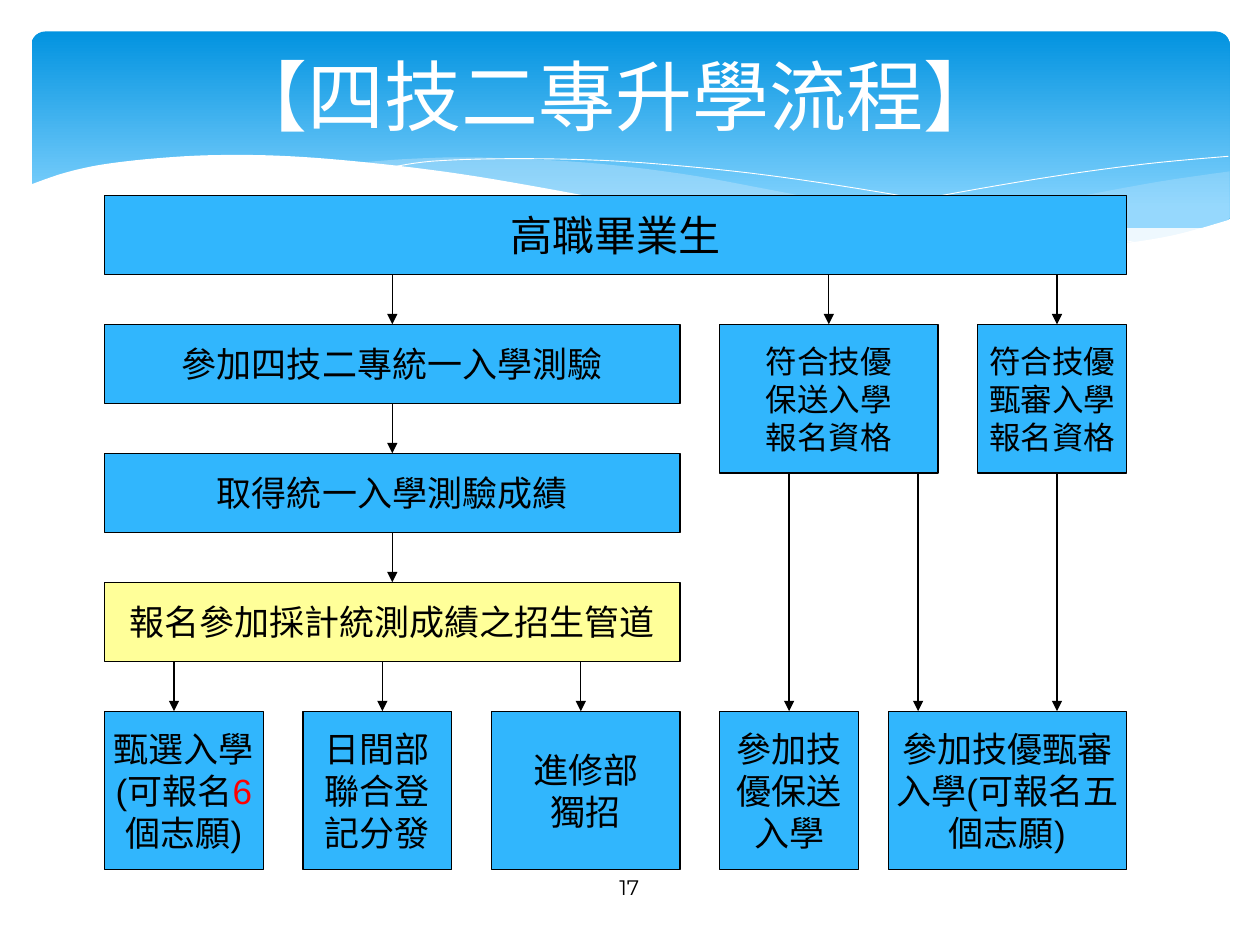
from lxml import etree
from pptx import Presentation
from pptx import util as u
from pptx.dml.color import RGBColor
from pptx.enum import shapes, text
from pptx.oxml import ns

BLUE, YELLOW, BLACK, WHITE, RED = "31B6FD", "FFFF99", "000000", "FFFFFF", "FF0000"
MIDDLE = {"vertical_anchor": text.MSO_ANCHOR.MIDDLE, "margin_left": 0,
          "margin_right": 0, "margin_top": 0, "margin_bottom": 0}
color = RGBColor.from_string


def write(frame, content, wrap, font_format):
    """Fill a text frame with centred lines; the digit 6 is shown in red."""
    for name, value in {**MIDDLE, "word_wrap": wrap}.items():
        setattr(frame, name, value)
    for index, line in enumerate(content.split("\n")):
        paragraph = frame.paragraphs[0] if index == 0 else frame.add_paragraph()
        paragraph.alignment = text.PP_ALIGN.CENTER
        for part in filter(None, line.partition("6")):
            run = paragraph.add_run()
            run.text = part
            for name, value in font_format.items():
                if name == "color":
                    run.font.color.rgb = color(RED if part == "6" else value)
                else:
                    setattr(run.font, name, value)


def smooth(points, steps=6):
    """Return a Catmull-Rom curve through the points, in EMU."""
    padded = [points[0], *points, points[-1]]
    curve = [points[0]]
    for a, b, c, d in zip(padded, padded[1:], padded[2:], padded[3:]):
        for step in range(1, steps + 1):
            t = step / steps
            curve.append([(2 * q + (r - p) * t + (2 * p - 5 * q + 4 * r - s) * t ** 2
                           + (3 * q - p - 3 * r + s) * t ** 3) / 2
                          for p, q, r, s in zip(a, b, c, d)])
    return [(u.Inches(x), u.Inches(y)) for x, y in curve]


presentation = Presentation()
presentation.slide_width, presentation.slide_height = u.Inches(10), u.Inches(7.5)
slide = presentation.slides.add_slide(presentation.slide_layouts[5])

# Gradient banner
banner = slide.shapes.add_shape(shapes.MSO_SHAPE.ROUNDED_RECTANGLE, u.Inches(0.25),
                                u.Inches(0.25), u.Inches(9.51), u.Inches(1.56))
banner.adjustments[0] = 0.07
banner.shadow.inherit = False
banner.line.fill.background()
banner.fill.gradient()
banner.fill.gradient_angle = 270
for stop, position, shade in zip(banner.fill.gradient_stops, (0, 0.9), ("0293E0", "83D3FE")):
    stop.position = position
    stop.color.rgb = color(shade)

# Waves: curves of one outline, fill, opacity in percent (no fill: white line)
waves = [
    ([[(9.76, 1.36), (9.21, 1.44), (8.61, 1.55), (7.79, 1.71), (7.06, 1.83), (6.61, 1.89)],
      [(6.61, 1.89), (7.18, 1.95), (7.69, 1.99), (8.35, 1.99), (8.89, 1.95), (9.35, 1.86),
       (9.76, 1.74)]], "C6E7FC", 29),
    ([[(8.93, 1.95), (8.07, 1.85), (7.06, 1.69), (6.13, 1.51), (5.41, 1.38), (4.64, 1.29),
       (3.8, 1.25), (3.28, 1.26), (2.86, 1.29)],
      [(2.86, 1.29), (3.62, 1.38), (4.49, 1.54), (5.3, 1.69), (6.18, 1.84), (6.95, 1.93),
       (7.61, 1.99), (8.28, 2), (8.93, 1.95)]], "C6E7FC", 40),
    ([[(3.09, 1.33), (3.43, 1.28), (4.01, 1.26), (4.69, 1.27), (5.32, 1.31), (6.08, 1.39),
       (6.95, 1.52), (7.95, 1.7), (9.07, 1.94)]], None, 100),
    ([[(6.13, 1.82), (6.72, 1.7), (7.48, 1.55), (8.36, 1.4), (9.1, 1.3), (9.75, 1.24)]],
     None, 100),
    ([[(9.77, 1.74), (9.3, 1.87), (8.75, 1.95), (8.09, 1.99), (7.26, 1.95), (6.26, 1.84),
       (5.29, 1.68), (4.47, 1.52), (3.65, 1.38), (2.92, 1.29), (2.3, 1.24), (1.77, 1.23),
       (1.32, 1.25), (0.85, 1.3), (0.52, 1.37), (0.23, 1.47)],
      [(0.23, 1.47), (0.23, 2.41)], [(0.23, 2.41), (9.77, 2.41)]], WHITE, 100),
]
for curves, shade, opacity in waves:
    outline = [point for curve in curves for point in smooth(curve)]
    builder = slide.shapes.build_freeform(*outline[0])
    builder.add_line_segments(outline[1:], close=shade is not None)
    wave = builder.convert_to_shape()
    wave.shadow.inherit = False
    if shade is None:
        wave.fill.background()
        wave.line.color.rgb = color(WHITE)
        wave.line.width = u.Pt(0.5)
        continue
    wave.line.fill.background()
    wave.fill.solid()
    wave.fill.fore_color.rgb = color(shade)
    if opacity < 100:
        solid = wave._element.spPr.find(ns.qn("a:solidFill"))
        etree.SubElement(solid[0], ns.qn("a:alpha"), val=str(opacity * 1000))

# Title, brought in front of the banner
title = slide.shapes.title
slide.shapes._spTree.append(title._element)
title.left, title.top, title.width, title.height = map(u.Inches, (0.5, 0.25, 8.77, 1))
write(title.text_frame, "【四技二專升學流程】", True,
      {"size": u.Pt(44), "name": "Cabin", "color": WHITE})

# Slide number
number = slide.shapes.add_textbox(*map(u.Inches, (4.36, 6.84, 1.27, 0.4)))
write(number.text_frame, "17", True,
      {"size": u.Pt(12), "name": "Montserrat", "color": BLACK})

# Flow chart grid: 2 mm cells, a new row of boxes every 13 cells
CELL, LEFT, TOP, ROW = u.Mm(2), u.Inches(0.83), u.Inches(1.55), 13

# Boxes: column, row, width, height, text size, fill, text
boxes = [
    (0, 0, 103, 8, 24, BLUE, "高職畢業生"),
    (0, 1, 58, 8, 20, BLUE, "參加四技二專統一入學測驗"),
    (0, 2, 58, 8, 20, BLUE, "取得統一入學測驗成績"),
    (0, 3, 58, 8, 20, YELLOW, "報名參加採計統測成績之招生管道"),
    (62, 1, 22, 15, 18, BLUE, "符合技優\n保送入學\n報名資格"),
    (88, 1, 15, 15, 18, BLUE, "符合技優\n甄審入學\n報名資格"),
    (0, 4, 16, 16, 20, BLUE, "甄選入學\n(可報名6\n個志願)"),
    (20, 4, 15, 16, 20, BLUE, "日間部\n聯合登\n記分發"),
    (39, 4, 19, 16, 20, BLUE, "進修部\n獨招"),
    (62, 4, 14, 16, 20, BLUE, "參加技\n優保送\n入學"),
    (79, 4, 24, 16, 20, BLUE, "參加技優甄審\n入學(可報名五\n個志願)"),
]
for column, row, width, height, size, shade, content in boxes:
    box = slide.shapes.add_shape(shapes.MSO_SHAPE.RECTANGLE, LEFT + column * CELL,
                                 TOP + row * ROW * CELL, width * CELL, height * CELL)
    box.shadow.inherit = False
    box.fill.solid()
    box.fill.fore_color.rgb = color(shade)
    box.line.color.rgb = color(BLACK)
    box.line.width = u.Pt(0.75)
    write(box.text_frame, content, False,
          {"size": u.Pt(size), "name": "Arial", "color": BLACK})

# Arrows: column, row and height of the box above, row of the box below
arrows = [(29, 0, 8, 1), (73, 0, 8, 1), (96, 0, 8, 1), (29, 1, 8, 2), (29, 2, 8, 3),
          (7, 3, 8, 4), (28, 3, 8, 4), (48, 3, 8, 4),
          (69, 1, 15, 4), (82, 1, 15, 4), (96, 1, 15, 4)]
for column, row, height, target in arrows:
    x = LEFT + column * CELL
    arrow = slide.shapes.add_connector(shapes.MSO_CONNECTOR.STRAIGHT,
                                       x, TOP + (row * ROW + height) * CELL,
                                       x, TOP + target * ROW * CELL)
    arrow.line.color.rgb = color(BLACK)
    arrow.line.width = u.Pt(0.75)
    etree.SubElement(arrow.line._get_or_add_ln(), ns.qn("a:tailEnd"), type="triangle")
    etree.SubElement(arrow._element.spPr, ns.qn("a:effectLst"))

presentation.save("out.pptx")
